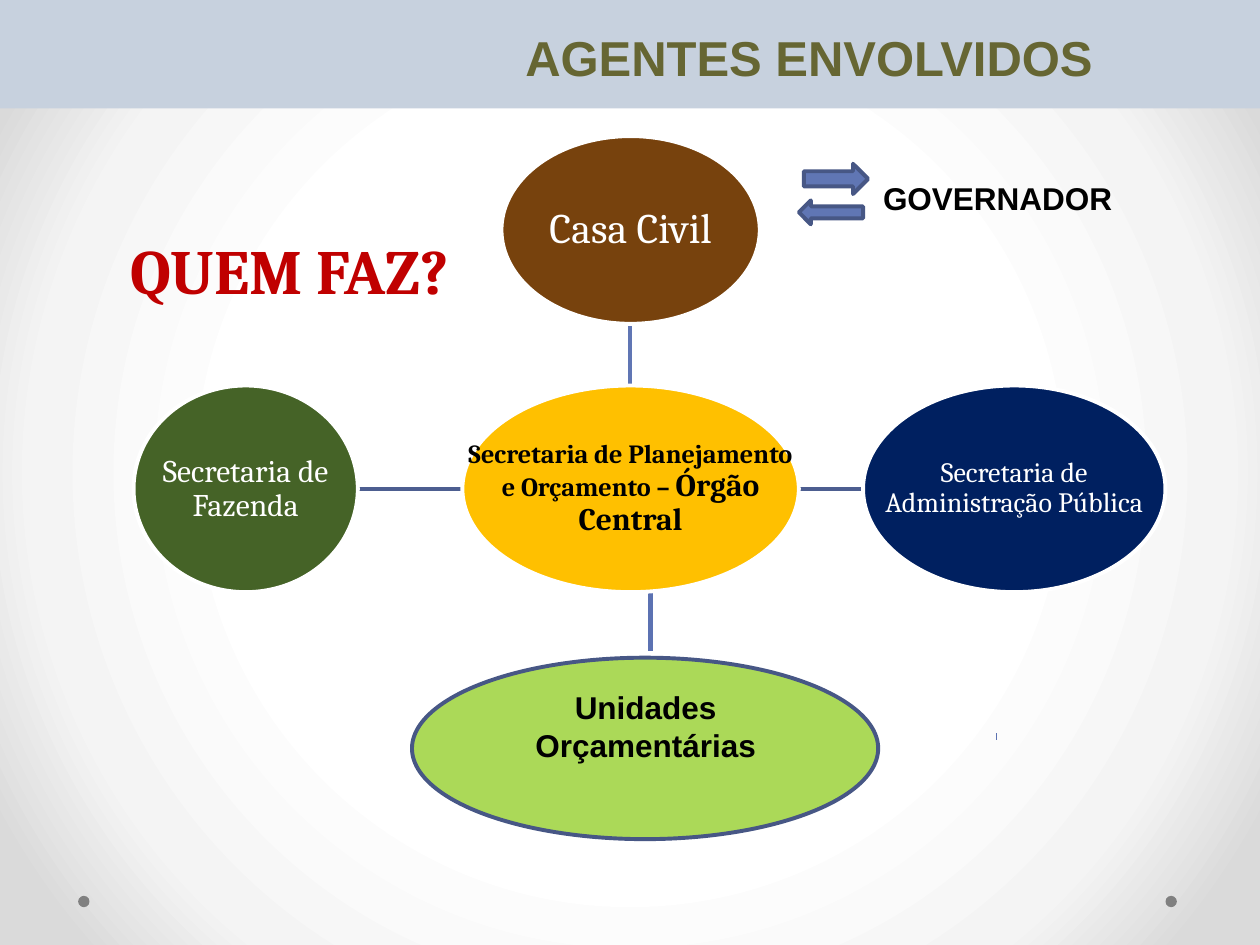
import pptx
import pptx.util
import pptx.oxml
import pptx.oxml.ns
import pptx.dml.color
import pptx.enum.shapes
import pptx.enum.text
from dataclasses import dataclass

Inches, Pt = pptx.util.Inches, pptx.util.Pt
Kind = pptx.enum.shapes.MSO_SHAPE
Align = pptx.enum.text.PP_ALIGN
Anchor = pptx.enum.text.MSO_ANCHOR


@dataclass(frozen=True)
class Theme:
    serif: str = "Cambria"
    sans: str = "Arial"
    white: str = "FFFFFF"
    black: str = "000000"
    red: str = "C00000"
    olive: str = "666633"
    band: str = "C7D1DE"
    dot: str = "808080"
    gold: str = "FFC000"
    brown: str = "77420D"
    navy: str = "002060"
    green: str = "456327"
    lime: str = "ABD958"
    blue: str = "6076B4"
    edge: str = "475785"
    link: str = "4D5E90"
    stem: str = "5C72B2"
    glow: tuple = ((50, "FFFFFF"), (76, "F4F4F4"), (92, "DADADA"))
    huge: int = 36
    head: int = 28
    large: int = 24
    body: int = 18
    small: int = 16
    tiny: int = 15


T = Theme()


def color(code):
    return pptx.dml.color.RGBColor.from_string(code)


def draw(slide, kind, box, fill, line=None):
    shape = slide.shapes.add_shape(kind, *map(Inches, box))
    shape.shadow.inherit = False
    shape.fill.solid()
    shape.fill.fore_color.rgb = color(fill)
    if line:
        shape.line.color.rgb = color(line)
        shape.line.width = Pt(2.25)
    else:
        shape.line.fill.background()
    return shape


def write(frame, runs, font, tint, bold=True, align=Align.CENTER, space=None):
    para = frame.paragraphs[0]
    para.alignment = align
    if space:
        para.line_spacing = space
    for text, size in runs:
        run = para.add_run()
        run.text = text
        run.font.name = font
        run.font.size = Pt(size)
        run.font.bold = bold
        run.font.color.rgb = color(tint)


def label(slide, box, runs, font, tint, anchor=Anchor.TOP, inset=None, **style):
    frame = slide.shapes.add_textbox(*map(Inches, box)).text_frame
    frame.word_wrap = True
    frame.vertical_anchor = anchor
    if inset is not None:
        frame.margin_left = frame.margin_right = Inches(inset)
        frame.margin_top = frame.margin_bottom = Inches(inset)
    write(frame, runs, font, tint, **style)


def join(slide, start, end, tint, width=2.25):
    line = slide.shapes.add_connector(
        pptx.enum.shapes.MSO_CONNECTOR.STRAIGHT, *map(Inches, start + end))
    line.line.color.rgb = color(tint)
    line.line.width = Pt(width)
    props = line._element.spPr
    props.append(props.makeelement(pptx.oxml.ns.qn("a:effectLst"), {}))


def paint(slide):
    """Radial glow and the two footer dots."""
    slide.background.fill.gradient()
    grad = slide._element.find(".//" + pptx.oxml.ns.qn("a:gradFill"))
    stops = "".join(f'<a:gs pos="{pos * 1000}"><a:srgbClr val="{tint}"/></a:gs>'
                    for pos, tint in T.glow)
    glow = pptx.oxml.parse_xml(
        f'<a:gradFill {pptx.oxml.ns.nsdecls("a")} rotWithShape="1">'
        f'<a:gsLst>{stops}</a:gsLst><a:path path="circle">'
        '<a:fillToRect l="50000" t="50000" r="50000" b="50000"/>'
        '</a:path></a:gradFill>')
    grad.getparent().replace(grad, glow)
    for left in (0.62, 9.25):
        draw(slide, Kind.OVAL, (left, 7.11, 0.09, 0.09), T.dot)


def header(slide, box):
    band = draw(slide, Kind.RECTANGLE, box, T.band)
    frame = band.text_frame
    frame.word_wrap = True
    frame.vertical_anchor = Anchor.MIDDLE
    frame.margin_left = Inches(2.94)
    frame.margin_top = Inches(0.12)
    write(frame, [("AGENTES ENVOLVIDOS", T.head)], T.sans, T.olive)


def agent(slide, box, fill, runs, tint=T.white, bold=False):
    # The label spans the full oval, wider than its inner text area
    draw(slide, Kind.OVAL, box, fill, T.white)
    label(slide, box, runs, T.serif, tint, Anchor.MIDDLE, 0.01,
          bold=bold, space=0.9)


def network(slide, box):
    """Agents around the central body; box bounds the whole cross."""
    left, top, width, height = box
    mid, row, tall = left + 3.94, top + 1.98, 1.64
    axis = row + tall / 2
    core = (mid - 1.33, row, 2.67, tall)
    civil = (mid - 1.02, top, 2.05, 1.49)
    admin = (left + width - 2.4, row, 2.4, tall)
    funds = (left, row, 1.78, tall)
    units = (left + 2.21, top + height - 1.44, 3.7, 1.44)

    # Links
    join(slide, (mid, row), (mid, top + 1.49), T.blue)
    join(slide, (core[0] + core[2], axis), (admin[0], axis), T.link)
    join(slide, (core[0], axis), (left + funds[2], axis), T.link)
    join(slide, (mid + 0.16, row + tall), (mid + 0.16, units[1] - 0.05),
         T.stem, 3)

    # Agents
    agent(slide, core, T.gold,
          [("Secretaria de Planejamento e Orçamento – ", T.tiny),
           ("Órgão Central", T.body)], T.black, True)
    agent(slide, civil, T.brown, [("Casa Civil", T.large)])
    agent(slide, admin, T.navy,
          [("Secretaria de Administração Pública", T.small)])
    agent(slide, funds, T.green, [("Secretaria de Fazenda", T.body)])

    # Budget units
    draw(slide, Kind.OVAL, units, T.lime, T.edge)
    label(slide, (units[0] + 0.79, units[1] + 0.19, 2.13, 0.71),
          [("Unidades Orçamentárias", T.body)], T.sans, T.black)


def governor(slide, box):
    left, top, width, height = box
    draw(slide, Kind.RIGHT_ARROW, (left + 0.04, top, 0.51, 0.24),
         T.blue, T.edge)
    draw(slide, Kind.LEFT_ARROW, (left, top + 0.29, 0.51, 0.19),
         T.blue, T.edge)
    label(slide, (left + 0.57, top + 0.07, width - 0.57, height - 0.08),
          [("GOVERNADOR", T.body)], T.sans, T.black, align=Align.LEFT)


def main():
    deck = pptx.Presentation()
    deck.slide_width, deck.slide_height = Inches(10), Inches(7.5)
    slide = deck.slides.add_slide(deck.slide_layouts[6])
    paint(slide)
    network(slide, (1.06, 1.08, 8.19, 5.58))
    label(slide, (0.62, 1.48, 3.36, 1.01), [("QUEM FAZ?", T.huge)],
          T.serif, T.red, Anchor.BOTTOM, space=Pt(58))
    governor(slide, (6.34, 1.3, 2.99, 0.48))
    # Small tick at lower right
    join(slide, (7.91, 5.82), (7.91, 5.87), T.stem, 0.75)
    header(slide, (0, -0.03, 10, 0.89))
    deck.save("out.pptx")


if __name__ == "__main__":
    main()
